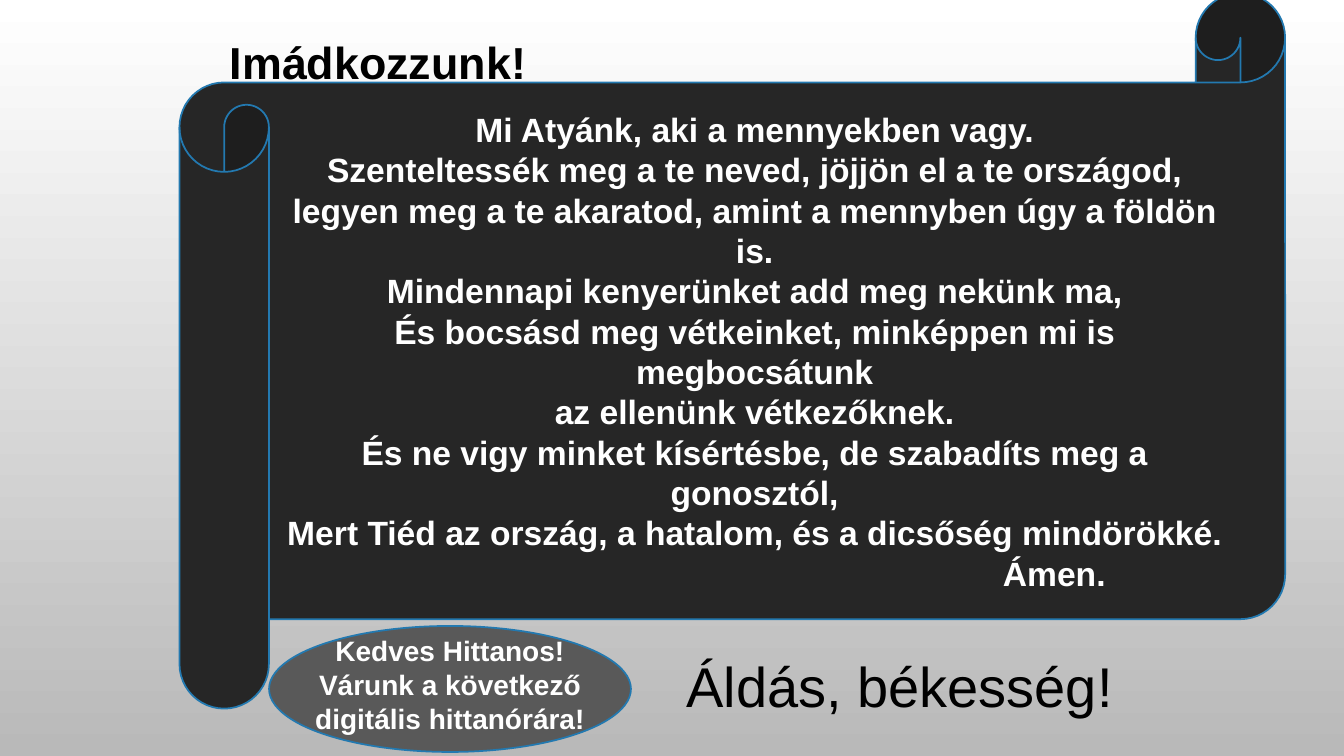
from dataclasses import dataclass

from pptx import Presentation
from pptx.dml.color import RGBColor
from pptx.enum.shapes import MSO_SHAPE as Preset
from pptx.enum.text import MSO_ANCHOR as Anchor, PP_ALIGN as Align
from pptx.shapes.autoshape import Shape
from pptx.slide import Slide
from pptx.util import Pt


@dataclass(frozen=True)
class Theme:
    font: str = "Arial"
    dark: str = "000000"
    light: str = "FFFFFF"
    scroll: str = "262626"
    ellipse: str = "595959"
    outline: str = "2379B0"
    background: tuple[str, str] = ("FFFFFF", "B9B9B9")
    outline_width: float = 1.25
    title_size: float = 32
    prayer_size: float = 24
    invitation_size: float = 20
    farewell_size: float = 40


@dataclass(frozen=True)
class Box:
    left: float
    top: float
    width: float
    height: float

    def lengths(self) -> tuple[Pt, Pt, Pt, Pt]:
        return Pt(self.left), Pt(self.top), Pt(self.width), Pt(self.height)


@dataclass(frozen=True)
class Panel:
    preset: Preset
    box: Box
    fill: str


@dataclass(frozen=True)
class Caption:
    box: Box
    text: str
    size: float
    color: str
    bold: bool = True


THEME = Theme()
SCROLL = Panel(Preset.HORIZONTAL_SCROLL, Box(128.2, -5, 789.8, 511.2), THEME.scroll)
ELLIPSE = Panel(Preset.OVAL, Box(192.2, 447.1, 258.5, 90), THEME.ellipse)
TITLE = Caption(Box(128.2, 21.5, 283.7, 44), "Imádkozzunk!", THEME.title_size, THEME.dark)
INVITATION = Caption(
    Box(192.2, 449.3, 258.5, 79.9),
    "Kedves Hittanos!\nVárunk a következő digitális hittanórára!",
    THEME.invitation_size,
    THEME.light,
)
FAREWELL = Caption(
    Box(402.4, 461.5, 480.2, 55.4), "Áldás, békesség!", THEME.farewell_size, THEME.dark, False
)
PRAYER = "\n".join([
    "Mi Atyánk, aki a mennyekben vagy.",
    "Szenteltessék meg a te neved, jöjjön el a te országod,",
    "legyen meg a te akaratod, amint a mennyben úgy a földön is.",
    "Mindennapi kenyerünket add meg nekünk ma,",
    "És bocsásd meg vétkeinket, minképpen mi is megbocsátunk",
    "az ellenünk vétkezőknek.",
    "És ne vigy minket kísértésbe, de szabadíts meg a gonosztól,",
    "Mert Tiéd az ország, a hatalom, és a dicsőség mindörökké.",
    "Ámen.",
])
AMEN_INDENT = 428


def rgb(color: str) -> RGBColor:
    """Convert a hexadecimal colour."""
    return RGBColor.from_string(color)


def write_text(shape: Shape, text: str, size: float, color: str, bold: bool) -> None:
    """Fill a shape with centred, wrapped paragraphs."""
    shape.text_frame.text = text
    shape.text_frame.word_wrap = True
    for paragraph in shape.text_frame.paragraphs:
        paragraph.alignment = Align.CENTER
        for run in paragraph.runs:
            run.font.name = THEME.font
            run.font.size = Pt(size)
            run.font.bold = bold
            run.font.color.rgb = rgb(color)


def add_panel(slide: Slide, panel: Panel) -> Shape:
    """Draw an outlined preset shape."""
    shape = slide.shapes.add_shape(panel.preset, *panel.box.lengths())
    shape.shadow.inherit = False
    shape.fill.solid()
    shape.fill.fore_color.rgb = rgb(panel.fill)
    shape.line.color.rgb = rgb(THEME.outline)
    shape.line.width = Pt(THEME.outline_width)
    return shape


def add_caption(slide: Slide, caption: Caption) -> None:
    """Place a text box."""
    shape = slide.shapes.add_textbox(*caption.box.lengths())
    write_text(shape, caption.text, caption.size, caption.color, caption.bold)


def add_prayer(slide: Slide) -> None:
    """Draw the scroll with the prayer, its last word shifted right."""
    scroll = add_panel(slide, SCROLL)
    write_text(scroll, PRAYER, THEME.prayer_size, THEME.light, True)
    scroll.text_frame.vertical_anchor = Anchor.MIDDLE
    amen = scroll.text_frame.paragraphs[-1]
    amen._p.get_or_add_pPr().set("marL", str(Pt(AMEN_INDENT)))


def paint_background(slide: Slide) -> None:
    """Apply the gradient from top to bottom."""
    fill = slide.background.fill
    fill.gradient()
    fill.gradient_angle = 270
    for stop, color in zip(fill.gradient_stops, THEME.background):
        stop.color.rgb = rgb(color)


def main() -> None:
    """Build and save the presentation."""
    presentation = Presentation()
    presentation.slide_width = Pt(960)
    presentation.slide_height = Pt(540)
    slide = presentation.slides.add_slide(presentation.slide_layouts[6])
    paint_background(slide)
    add_caption(slide, TITLE)
    add_prayer(slide)
    add_panel(slide, ELLIPSE)
    add_caption(slide, INVITATION)
    add_caption(slide, FAREWELL)
    presentation.save("out.pptx")


if __name__ == "__main__":
    main()
